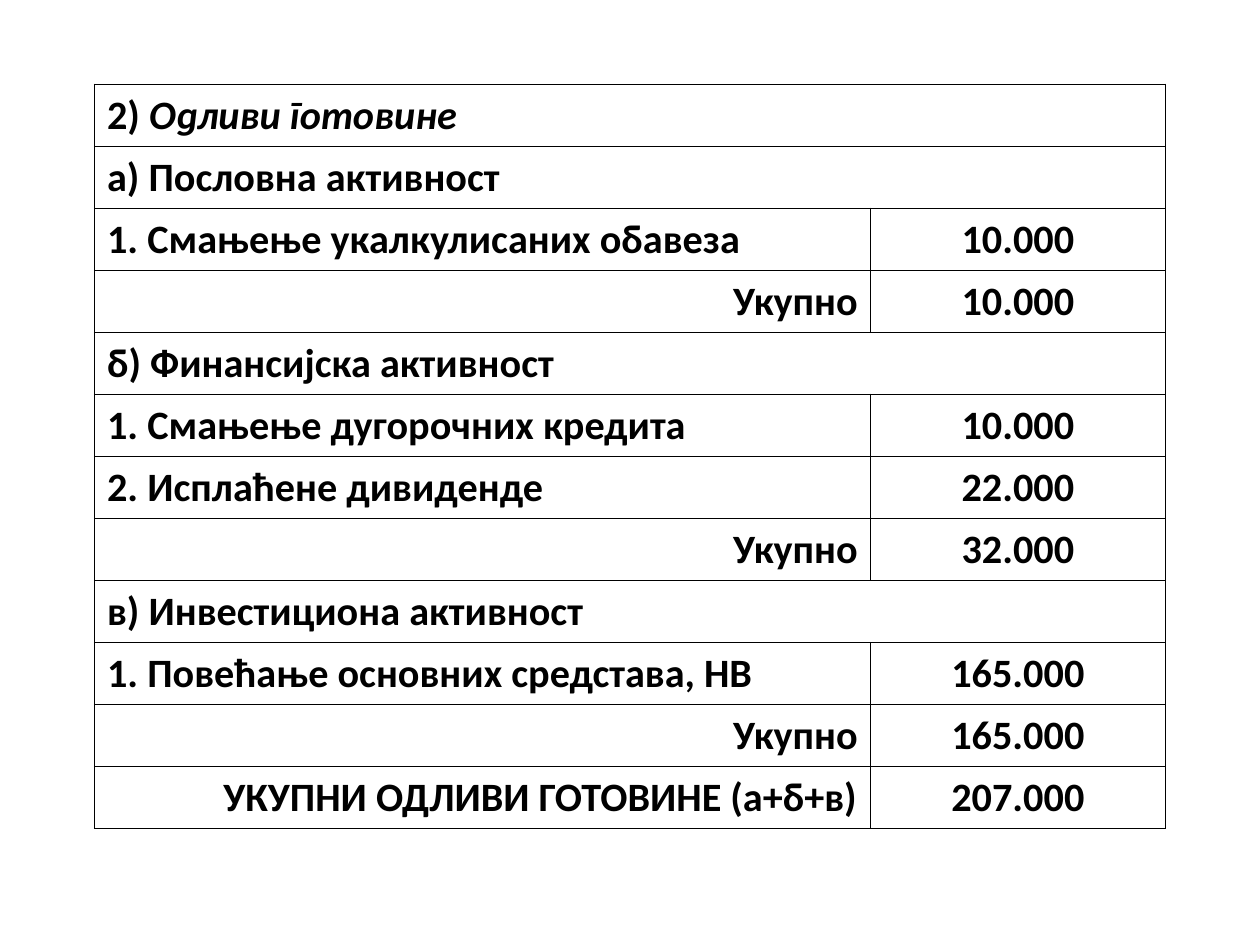
from dataclasses import dataclass

from lxml import etree
from pptx import Presentation
from pptx.dml.color import RGBColor
from pptx.enum.lang import MSO_LANGUAGE_ID
from pptx.enum.text import PP_ALIGN
from pptx.oxml.ns import qn
from pptx.util import Inches, Pt

LEFT, CENTER, RIGHT = PP_ALIGN.LEFT, PP_ALIGN.CENTER, PP_ALIGN.RIGHT
SERBIAN = MSO_LANGUAGE_ID.SERBIAN_CYRILLIC


@dataclass(frozen=True)
class Theme:
    font: str = "Calibri"
    size: int = 23
    ink: str = "000000"
    line: int = 1


THEME = Theme()
COLS = (6.16, 2.34)

# Each row: label runs as (text, italic), alignment, amount (None spans the row)
ROWS = [
    ([("2) ", False), ("Одливи готовине", True)], LEFT, None),
    ([("а) Пословна активност", False)], LEFT, None),
    ([("1. Смањење укалкулисаних обавеза", False)], LEFT, "10.000"),
    ([("Укупно", False)], RIGHT, "10.000"),
    ([("б) Финансијска активност", False)], LEFT, None),
    ([("1. Смањење дугорочних кредита", False)], LEFT, "10.000"),
    ([("2. Исплаћене дивиденде", False)], LEFT, "22.000"),
    ([("Укупно", False)], RIGHT, "32.000"),
    ([("в) Инвестициона активност", False)], LEFT, None),
    ([("1. Повећање основних средстава, НВ", False)], LEFT, "165.000"),
    ([("Укупно", False)], RIGHT, "165.000"),
    ([("УКУПНИ ОДЛИВИ ГОТОВИНЕ (а+б+в)", False)], RIGHT, "207.000"),
]


def add_borders(cell):
    props = cell._tc.get_or_add_tcPr()
    for spot, side in enumerate(("a:lnL", "a:lnR", "a:lnT", "a:lnB")):
        line = etree.Element(qn(side), w=str(Pt(THEME.line)))
        fill = etree.SubElement(line, qn("a:solidFill"))
        etree.SubElement(fill, qn("a:srgbClr"), val=THEME.ink)
        props.insert(spot, line)


def style_cell(cell):
    cell.fill.background()
    add_borders(cell)


def write_cell(cell, runs, align):
    para = cell.text_frame.paragraphs[0]
    para.alignment = align
    font = para.font
    font.name = THEME.font
    font.size = Pt(THEME.size)
    font.bold = True
    font.color.rgb = RGBColor.from_string(THEME.ink)
    for text, italic in runs:
        run = para.add_run()
        run.text = text
        run.font.language_id = SERBIAN
        if italic:
            run.font.italic = True


def add_flows(slide):
    frame = slide.shapes.add_table(
        len(ROWS), len(COLS),
        Inches(0.75), Inches(0.67), Inches(sum(COLS)), Inches(5.8),
    )
    table = frame.table
    table.first_row = table.horz_banding = False
    for col, width in zip(table.columns, COLS):
        col.width = Inches(width)
    for row, (runs, align, amount) in enumerate(ROWS):
        label, value = table.cell(row, 0), table.cell(row, 1)
        style_cell(label)
        style_cell(value)
        write_cell(label, runs, align)
        if amount is None:
            label.merge(value)
        else:
            write_cell(value, [(amount, False)], CENTER)


def main():
    deck = Presentation()
    deck.slide_width, deck.slide_height = Inches(10), Inches(7.5)
    slide = deck.slides.add_slide(deck.slide_layouts[6])
    add_flows(slide)
    deck.save("out.pptx")


if __name__ == "__main__":
    main()
